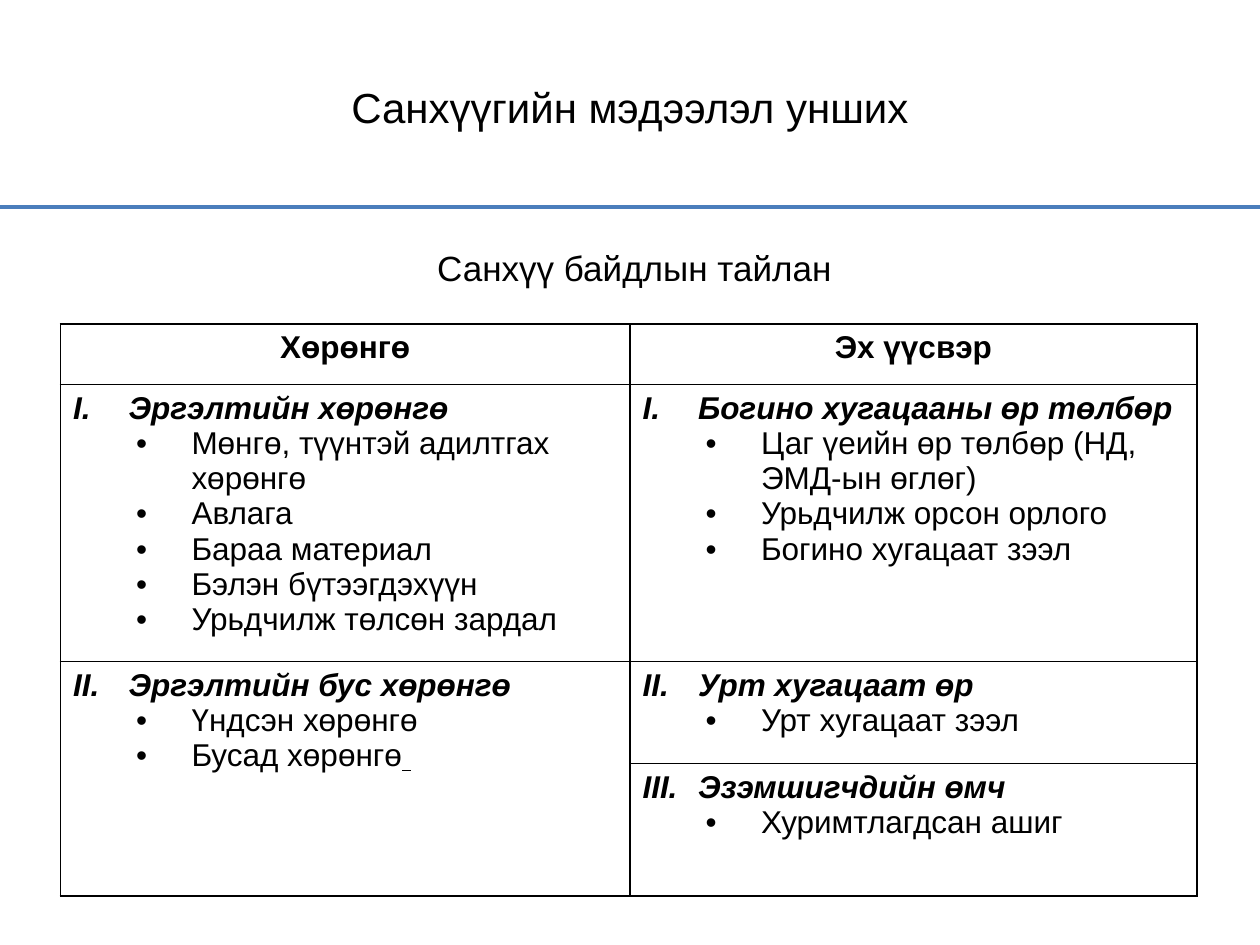
"""Builds a slide with a statement of financial position as a two-column table."""
from lxml.etree import SubElement
from pptx import Presentation
from pptx.dml.color import RGBColor
from pptx.enum.shapes import MSO_CONNECTOR
from pptx.enum.text import MSO_ANCHOR, PP_ALIGN
from pptx.oxml import parse_xml
from pptx.oxml.ns import nsdecls, qn
from pptx.util import Inches, Pt

BLACK = RGBColor(0x00, 0x00, 0x00)
BLUE = RGBColor(0x4B, 0x7E, 0xBC)
FONT = "Arial"

presentation = Presentation()
presentation.slide_width, presentation.slide_height = Inches(10), Inches(7.5)
COLUMN = presentation.slide_width / 100
ROW = presentation.slide_height / 75
slide = presentation.slides.add_slide(presentation.slide_layouts[6])


def format_runs(paragraph, size, bold=False, italic=False):
    for run in paragraph.runs:
        run.font.name, run.font.size = FONT, Pt(size)
        run.font.bold, run.font.italic = bold, italic
        run.font.color.rgb = BLACK


def set_bullet(paragraph, indent, tag, **attributes):
    properties = paragraph._p.get_or_add_pPr()
    properties.set("marL", str(int(indent * COLUMN)))
    properties.set("indent", str(int(-4.4 * COLUMN)))
    SubElement(properties, qn("a:buFont"), typeface=FONT)
    SubElement(properties, qn(tag), **attributes)


headings = [
    ("Санхүү байдлын тайлан", 24 / 1.2, (2.3, 18.3, 95.3, 56.7), MSO_ANCHOR.TOP, (1.8, 1.3, 0.5)),
    ("Санхүүгийн мэдээлэл унших", 24, (5, 4.2, 90, 12.5), MSO_ANCHOR.MIDDLE, (1, 0.5, 4.4)),
]
for text, size, (left, top, width, height), anchor, margins in headings:
    box = slide.shapes.add_textbox(
        int(left * COLUMN), int(top * ROW), int(width * COLUMN), int(height * ROW))
    frame = box.text_frame
    frame.word_wrap = True
    frame.vertical_anchor = anchor
    frame.margin_left = int(margins[0] * COLUMN)
    frame.margin_top, frame.margin_bottom = (int(margin * ROW) for margin in margins[1:])
    frame.text = text
    frame.paragraphs[0].alignment = PP_ALIGN.CENTER
    format_runs(frame.paragraphs[0], size)

column_widths = [45.2, 45]
row_heights = [4.8, 20.2, 8.1, 10.5]
table = slide.shapes.add_table(
    len(row_heights), len(column_widths), int(4.8 * COLUMN), int(25.7 * ROW),
    int(sum(column_widths) * COLUMN), int(sum(row_heights) * ROW)).table
table.first_row = table.horz_banding = False
for column, width in zip(table.columns, column_widths):
    column.width = int(width * COLUMN)
for row, height in zip(table.rows, row_heights):
    row.height = int(height * ROW)
for cell in table.iter_cells():
    cell.fill.background()
    for position, side in enumerate("LRTB"):
        border = parse_xml(
            f'<a:ln{side} {nsdecls("a")} w="{Pt(1)}"><a:solidFill>'
            f'<a:srgbClr val="{BLACK}"/></a:solidFill></a:ln{side}>')
        cell._tc.get_or_add_tcPr().insert(position, border)
table.cell(2, 0).merge(table.cell(3, 0))

for index, text in enumerate(["Хөрөнгө", "Эх үүсвэр"]):
    paragraph = table.cell(0, index).text_frame.paragraphs[0]
    paragraph.text = text
    paragraph.alignment = PP_ALIGN.CENTER
    format_runs(paragraph, 18, bold=True)

sections = [
    (1, 0, 1, "Эргэлтийн хөрөнгө",
     ["Мөнгө, түүнтэй адилтгах хөрөнгө", "Авлага", "Бараа материал",
      "Бэлэн бүтээгдэхүүн", "Урьдчилж төлсөн зардал"]),
    (1, 1, 1, "Богино хугацааны өр төлбөр",
     ["Цаг үеийн өр төлбөр (НД, ЭМД-ын өглөг)", "Урьдчилж орсон орлого",
      "Богино хугацаат зээл"]),
    (2, 0, 2, "Эргэлтийн бус хөрөнгө", ["Үндсэн хөрөнгө", "Бусад хөрөнгө"]),
    (2, 1, 2, "Урт хугацаат өр", ["Урт хугацаат зээл"]),
    (3, 1, 3, "Эзэмшигчдийн өмч", ["Хуримтлагдсан ашиг"]),
]
for row, column, number, heading, items in sections:
    frame = table.cell(row, column).text_frame
    paragraph = frame.paragraphs[0]
    paragraph.text = heading
    set_bullet(paragraph, 4.4, "a:buAutoNum", type="romanUcPeriod", startAt=str(number))
    format_runs(paragraph, 18, bold=True, italic=True)
    for item in items:
        paragraph = frame.add_paragraph()
        paragraph.text = item
        paragraph.level = 1
        set_bullet(paragraph, 9.4, "a:buChar", char="•")
        format_runs(paragraph, 18)

last_asset = table.cell(2, 0).text_frame.paragraphs[-1]
underlined_run = last_asset.add_run()
underlined_run.text = " "
format_runs(last_asset, 18)
underlined_run.font.underline = True

divider = slide.shapes.add_connector(
    MSO_CONNECTOR.STRAIGHT, 0, int(16.4 * ROW), int(100.2 * COLUMN), int(16.4 * ROW))
divider.line.color.rgb = BLUE
divider.line.width = Pt(2.25)
SubElement(divider._element.spPr, qn("a:effectLst"))

presentation.save("out.pptx")
